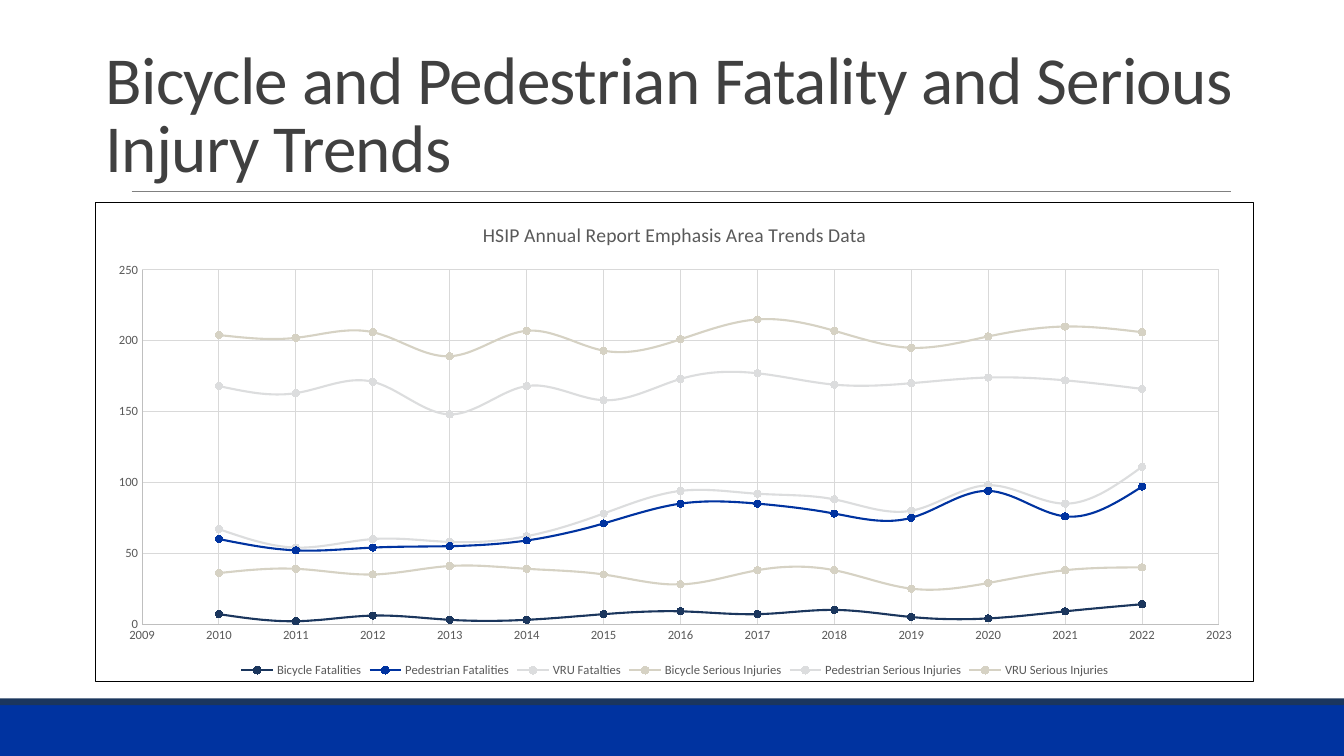
from lxml import etree
from pptx import Presentation
from pptx.chart.data import XyChartData
from pptx.dml.color import RGBColor
from pptx.enum.chart import (XL_CHART_TYPE as CT, XL_LEGEND_POSITION as LP,
                             XL_MARKER_STYLE as MS, XL_TICK_MARK as TM)
from pptx.enum.shapes import MSO_CONNECTOR as MC, MSO_SHAPE as SHAPE
from pptx.enum.text import MSO_ANCHOR as ANCHOR
from pptx.oxml import parse_xml
from pptx.oxml.ns import nsdecls, qn
from pptx.util import Cm, Pt

FONT = "Calibri"
COLORS = {"blue": "0033A0", "navy": "1B365D", "silver": "DCDDDE", "sand": "D6D2C4",
          "title": "404040", "label": "595959", "rule": "808080",
          "axis": "BFBFBF", "grid": "D9D9D9", "border": "000000"}
YEARS = range(2022, 2009, -1)
SERIES = [
    ("Bicycle Fatalities", "navy", [14, 9, 4, 5, 10, 7, 9, 7, 3, 3, 6, 2, 7]),
    ("Pedestrian Fatalities", "blue", [97, 76, 94, 75, 78, 85, 85, 71, 59, 55, 54, 52, 60]),
    ("VRU Fatalties", "silver", [111, 85, 98, 80, 88, 92, 94, 78, 62, 58, 60, 54, 67]),
    ("Bicycle Serious Injuries", "sand", [40, 38, 29, 25, 38, 38, 28, 35, 39, 41, 35, 39, 36]),
    ("Pedestrian Serious Injuries", "silver",
     [166, 172, 174, 170, 169, 177, 173, 158, 168, 148, 171, 163, 168]),
    ("VRU Serious Injuries", "sand",
     [206, 210, 203, 195, 207, 215, 201, 193, 207, 189, 206, 202, 204]),
]


def rgb(name):
    return RGBColor.from_string(COLORS[name])


def style_line(line, color, width):
    line.color.rgb = rgb(color)
    line.width = Pt(width)


def style_font(font, color, size):
    font.name, font.size, font.bold = FONT, Pt(size), False
    font.color.rgb = rgb(color)


def add_footer(s, x, y, w, h):
    """Blue band with a thin navy strip along its top."""
    strip = Cm(0.17)
    for top, height, color in ((y + strip, h - strip, "blue"), (y, strip, "navy")):
        band = s.shapes.add_shape(SHAPE.RECTANGLE, x, top, w, height)
        band.shadow.inherit = False
        band.fill.solid()
        band.fill.fore_color.rgb = rgb(color)
        band.line.fill.background()


def add_title(s, x, y, w, h):
    """Title resting on a thin rule at the bottom of the box."""
    rule = s.shapes.add_connector(MC.STRAIGHT, x + Cm(0.91), y + h, x + Cm(28.6), y + h)
    style_line(rule.line, "rule", 0.5)
    etree.SubElement(rule._element.spPr, qn("a:effectLst"))
    tf = s.shapes.add_textbox(x, y, w, h).text_frame
    tf.word_wrap = True
    tf.vertical_anchor = ANCHOR.BOTTOM
    p = tf.paragraphs[0]
    p.line_spacing = 0.85
    r = p.add_run()
    r.text = "Bicycle and Pedestrian Fatality and Serious Injury Trends"
    style_font(r.font, "title", 48)
    r._r.get_or_add_rPr().set("spc", "-50")


def style_axis(axis, low, high, step):
    axis.minimum_scale, axis.maximum_scale, axis.major_unit = low, high, step
    axis.major_tick_mark = axis.minor_tick_mark = TM.NONE
    axis.has_major_gridlines = True
    style_line(axis.major_gridlines.format.line, "grid", 0.75)
    style_line(axis.format.line, "axis", 0.75)
    style_font(axis.tick_labels.font, "label", 9)
    axis.tick_labels.number_format = "General"
    axis.tick_labels.number_format_is_linked = False


def frame_chart(chart):
    """Give the chart area its border and fix the inner plot area."""
    chart._chartSpace.find(qn("c:chart")).addnext(parse_xml(
        f'<c:spPr {nsdecls("c", "a")}><a:noFill/><a:ln w="9525"><a:solidFill>'
        f'<a:srgbClr val="{COLORS["border"]}"/></a:solidFill></a:ln></c:spPr>'))
    plot = chart._chartSpace.chart.plotArea
    for old in plot.findall(qn("c:layout")):
        plot.remove(old)
    sizes = "".join(f'<c:{tag} val="{val}"/>' for tag, val in
                    (("x", 0.04), ("y", 0.14), ("w", 0.93), ("h", 0.74)))
    plot.insert(0, parse_xml(
        f'<c:layout {nsdecls("c")}><c:manualLayout><c:layoutTarget val="inner"/>'
        f'<c:xMode val="edge"/><c:yMode val="edge"/>{sizes}</c:manualLayout></c:layout>'))


def add_trends(s, x, y, w, h):
    data = XyChartData()
    for name, _, values in SERIES:
        points = data.add_series(name)
        for year, value in zip(YEARS, values):
            points.add_data_point(year, value)
    chart = s.shapes.add_chart(CT.XY_SCATTER_SMOOTH, x, y, w, h, data).chart
    style_font(chart.font, "border", 10)
    chart.has_title = True
    r = chart.chart_title.text_frame.paragraphs[0].add_run()
    r.text = "HSIP Annual Report Emphasis Area Trends Data"
    style_font(r.font, "label", 14)
    chart.has_legend = True
    chart.legend.position = LP.BOTTOM
    chart.legend.include_in_layout = False
    style_font(chart.legend.font, "label", 9)
    style_axis(chart.category_axis, 2009, 2023, 1)
    style_axis(chart.value_axis, 0, 250, 50)
    chart.plots[0].vary_by_categories = False
    for series, (_, color, _) in zip(chart.plots[0].series, SERIES):
        style_line(series.format.line, color, 1.5)
        marker = series.marker
        marker.style, marker.size = MS.CIRCLE, 5
        marker.format.fill.solid()
        marker.format.fill.fore_color.rgb = rgb(color)
        style_line(marker.format.line, color, 0.75)
        series._element.get_or_add_smooth().val = True
    frame_chart(chart)


def main():
    prs = Presentation()
    prs.slide_width, prs.slide_height = Cm(33.87), Cm(19.05)
    s = prs.slides.add_slide(prs.slide_layouts[6])
    add_footer(s, 0, Cm(17.6), prs.slide_width, Cm(1.45))
    add_title(s, Cm(2.41), Cm(0.79), Cm(31.45), Cm(4.03))
    add_trends(s, Cm(2.4), Cm(5.1), Cm(29.21), Cm(12.09))
    prs.save("out.pptx")


if __name__ == "__main__":
    main()
